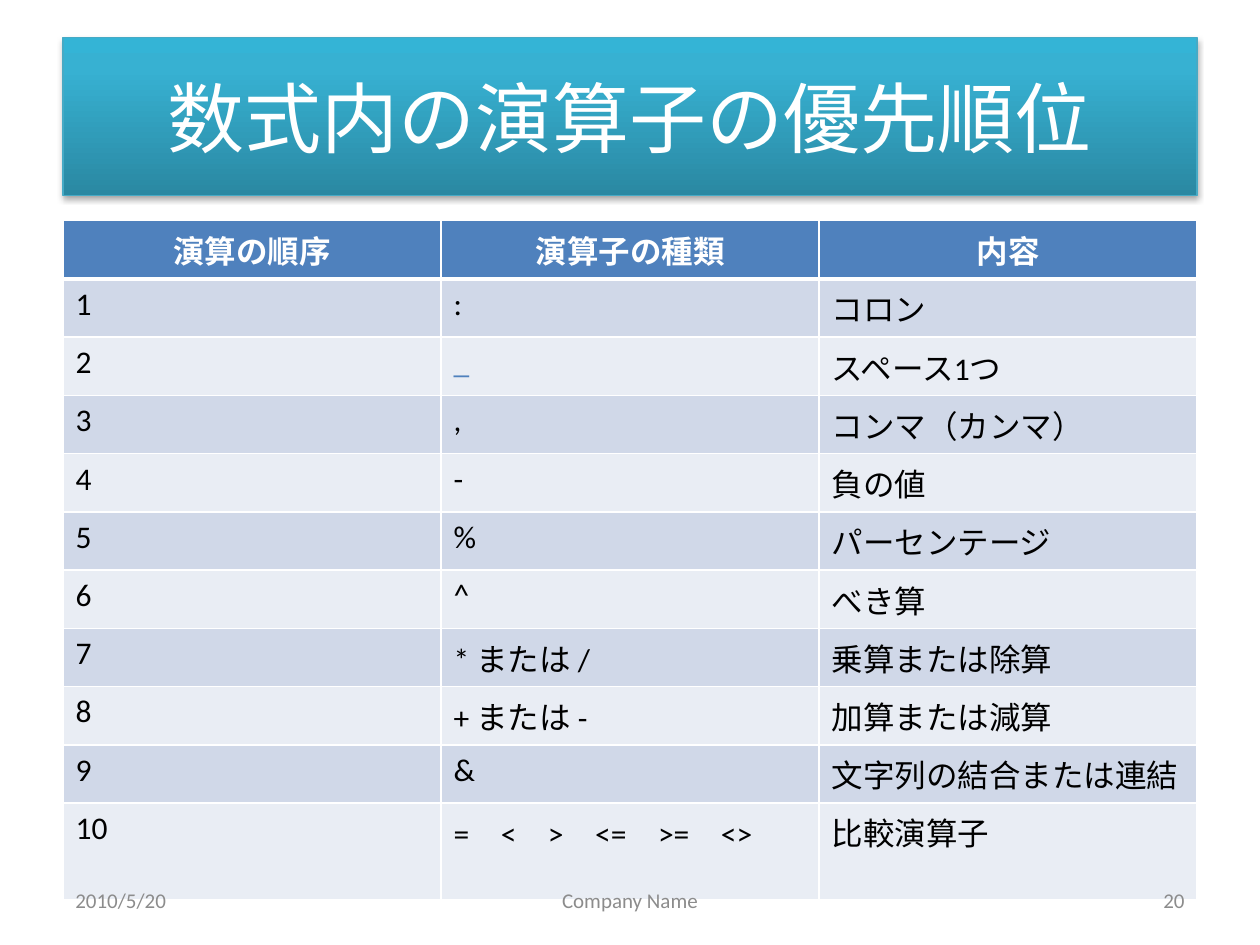
import lxml.etree
import pptx
import pptx.dml.color
import pptx.enum.text
import pptx.oxml
import pptx.oxml.ns
import pptx.util

Cm, Pt = pptx.util.Cm, pptx.util.Pt
ALIGN, ANCHOR = pptx.enum.text.PP_ALIGN, pptx.enum.text.MSO_ANCHOR
qn = pptx.oxml.ns.qn

COLORS = {
    "white": "FFFFFF", "black": "000000", "grey": "8C8C8C",
    "blue": "4F81BD", "band_dark": "D0D8E8", "band_light": "E9EDF4",
    "teal_line": "46AAC5", "teal_dark": "2A88A2",
    "teal_mid": "37B1D2", "teal_light": "34B4D6",
}
LEFT, WIDTH = 1.27, 22.86

HEADER = ["演算の順序", "演算子の種類", "内容"]
OPERATORS = [
    (":", "コロン"),
    ("_", "スペース1つ"),
    (",", "コンマ（カンマ）"),
    ("-", "負の値"),
    ("%", "パーセンテージ"),
    ("^", "べき算"),
    ("* または /", "乗算または除算"),
    ("+ または -", "加算または減算"),
    ("&", "文字列の結合または連結"),
    ("=　<　>　<=　>=　<>", "比較演算子"),
]


def rgb(name):
    return pptx.dml.color.RGBColor.from_string(COLORS[name])


def write(tf, text, size=18, color="black", bold=False, align=ALIGN.LEFT):
    p = tf.paragraphs[0]
    p.alignment = align
    r = p.add_run()
    r.text = text
    r.font.name = "Calibri"
    r.font.size = Pt(size)
    r.font.bold = bold
    r.font.color.rgb = rgb(color)


def add_xml(parent, tag, **attrs):
    return lxml.etree.SubElement(parent, qn(tag), {k: str(v) for k, v in attrs.items()})


class Deck:
    def __init__(self, prs):
        self.prs = prs
        self.slide = prs.slides.add_slide(prs.slide_layouts[5])

    def title(self, text, left, top, width, height):
        s = self.slide.shapes.title
        s.left, s.top, s.width, s.height = map(Cm, (left, top, width, height))
        # Upward three-stop gradient
        s.fill.gradient()
        s.fill.gradient_angle = 90
        stops = s.fill._fill._gradFill.find(qn("a:gsLst"))
        for gs in list(stops):
            stops.remove(gs)
        for pos, name in ((0, "teal_dark"), (80, "teal_mid"), (100, "teal_light")):
            gs = add_xml(stops, "a:gs", pos=pos * 1000)
            add_xml(gs, "a:srgbClr", val=COLORS[name])
        s.line.color.rgb = rgb("teal_line")
        s.line.width = Pt(0.75)
        # Soft shadow below
        effects = add_xml(s._element.spPr, "a:effectLst")
        shadow = add_xml(effects, "a:outerShdw", blurRad=Pt(3.1), dist=Pt(1.8),
                         dir=90 * 60000, rotWithShape=0)
        add_xml(add_xml(shadow, "a:srgbClr", val=COLORS["black"]), "a:alpha", val=35000)
        tf = s.text_frame
        tf.vertical_anchor = ANCHOR.MIDDLE
        write(tf, text, size=44, color="white", align=ALIGN.CENTER)

    def border(self, cell, **widths):
        tcPr = cell._tc.get_or_add_tcPr()
        for side in "LRTB":
            ln = add_xml(tcPr, f"a:ln{side}", w=Pt(widths.get(side, 1)))
            add_xml(add_xml(ln, "a:solidFill"), "a:srgbClr", val=COLORS["white"])

    def table(self, rows, left, top, width, row_height):
        s = self.slide.shapes.add_table(len(rows), len(rows[0]), Cm(left), Cm(top),
                                        Cm(width), Cm(row_height * len(rows)))
        for i, row in enumerate(rows):
            s.table.rows[i].height = Cm(row_height)
            for j, text in enumerate(row):
                cell = s.table.cell(i, j)
                self.border(cell, B=3 if i == 0 else 1, T=3 if i == 1 else 1)
                cell.fill.solid()
                if i == 0:
                    cell.fill.fore_color.rgb = rgb("blue")
                    cell.vertical_anchor = ANCHOR.MIDDLE
                    write(cell.text_frame, text, color="white", bold=True,
                          align=ALIGN.CENTER)
                else:
                    cell.fill.fore_color.rgb = rgb("band_dark" if i % 2 else "band_light")
                    write(cell.text_frame, text, color="blue" if text == "_" else "black")

    def footer(self, text, left, width, align):
        s = self.slide.shapes.add_textbox(Cm(left), Cm(17.65), Cm(width), Cm(1.01))
        tf = s.text_frame
        tf.word_wrap = True
        tf.vertical_anchor = ANCHOR.MIDDLE
        write(tf, text, size=12, color="grey", align=align)


def main():
    prs = pptx.Presentation()
    prs.slide_width, prs.slide_height = Cm(25.4), Cm(19.05)
    deck = Deck(prs)

    # Title banner
    deck.title("数式内の演算子の優先順位", LEFT, 0.76, WIDTH, 3.18)

    # Operator precedence table
    rows = [HEADER] + [(str(n), *op) for n, op in enumerate(OPERATORS, 1)]
    deck.table(rows, LEFT, 4.45, WIDTH, 1.03)

    # Date, footer and slide number
    deck.footer("2010/5/20", LEFT, 5.93, ALIGN.LEFT)
    deck.footer("Company Name", 8.68, 8.04, ALIGN.CENTER)
    deck.footer("20", LEFT + WIDTH - 5.93, 5.93, ALIGN.RIGHT)

    prs.save("out.pptx")


if __name__ == "__main__":
    main()
